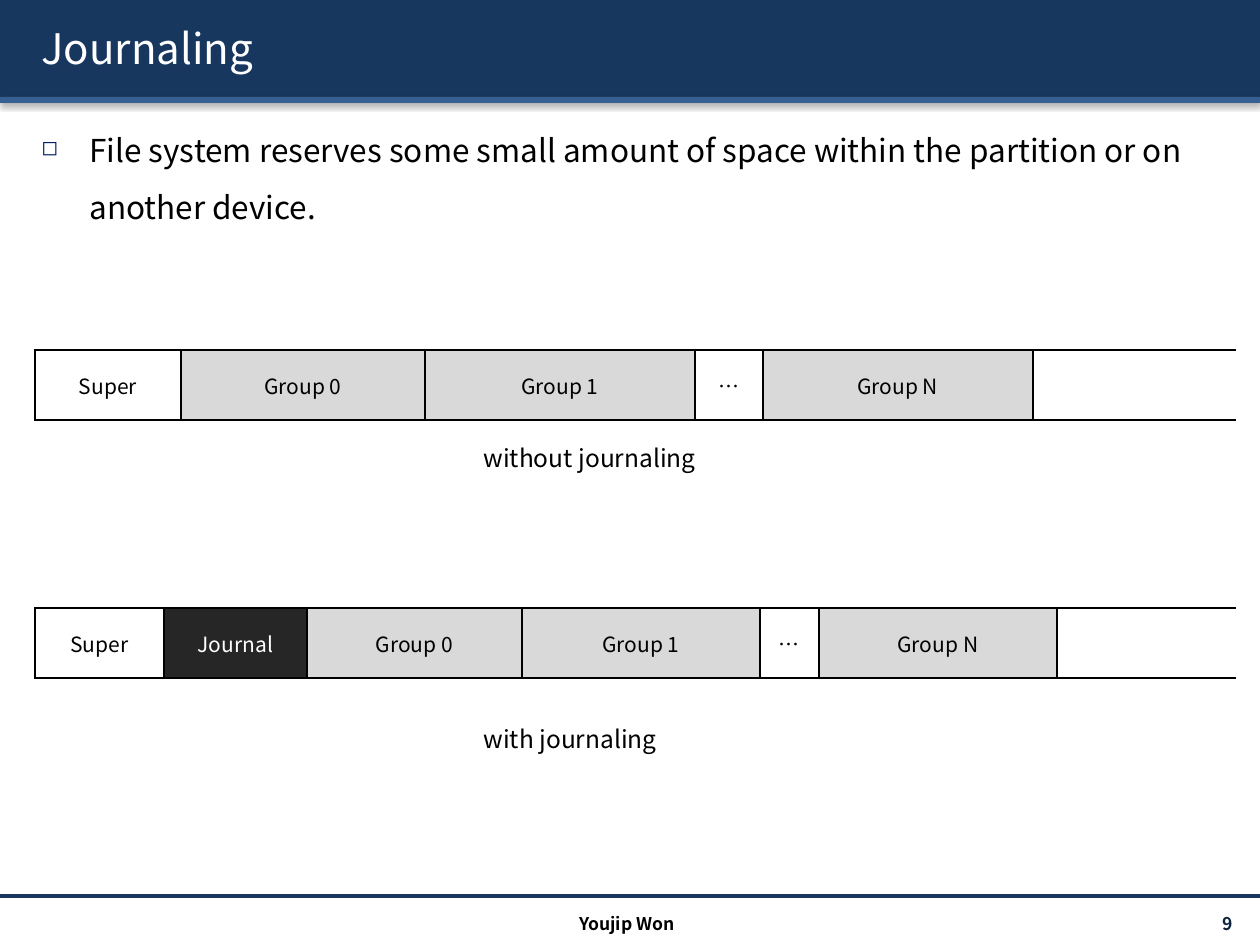
from lxml.etree import SubElement
from pptx import Presentation
from pptx.dml.color import RGBColor
from pptx.enum.shapes import MSO_CONNECTOR, MSO_SHAPE
from pptx.enum.text import MSO_ANCHOR, PP_ALIGN
from pptx.oxml import parse_xml
from pptx.oxml.ns import nsdecls, qn
from pptx.util import Pt

PX = 914400 / 126
FONT = "Noto Sans CJK KR"
COLORS = {
    "navy": "17375E", "blue": "376092", "bullet": "002060", "page": "0F243E",
    "black": "000000", "white": "FFFFFF", "gray": "D9D9D9", "dark": "262626",
}


def px(*values):
    return [round(v * PX) for v in values]


def write(tf, text, size, color="black", bold=False, align=PP_ALIGN.LEFT):
    """Put one styled run in a text frame and return its paragraph and run."""
    p = tf.paragraphs[0]
    p.alignment = align
    r = p.add_run()
    r.text = text
    for name, value in {"size": Pt(size), "bold": bold, "name": FONT}.items():
        setattr(r.font, name, value)
    r.font.color.rgb = RGBColor.from_string(COLORS[color])
    SubElement(r.font._element, qn("a:ea"), typeface=FONT)
    return p, r


prs = Presentation()
prs.slide_width, prs.slide_height = px(1260, 945)
s = prs.slides.add_slide(prs.slide_layouts[6])

SHADOW = (
    f'<a:effectLst {nsdecls("a")}><a:outerShdw blurRad="{{}}" dist="{{}}" dir="{{}}">'
    '<a:srgbClr val="000000"><a:alpha val="{}"/></a:srgbClr></a:outerShdw></a:effectLst>'
)

# Header bars and footer rule
for top, height, color in [(0, 97, "navy"), (97, 6, "blue")]:
    sp = s.shapes.add_shape(MSO_SHAPE.RECTANGLE, *px(0, top, 1260, height))
    sp.fill.solid()
    sp.fill.fore_color.rgb = RGBColor.from_string(COLORS[color])
    sp.line.fill.background()
    sp._element.spPr.append(parse_xml(SHADOW.format(39370, 20320, 5400000, 38000)))

rule = s.shapes.add_connector(MSO_CONNECTOR.STRAIGHT, *px(0, 896, 1260, 896))
rule.line.color.rgb = RGBColor.from_string(COLORS["navy"])
rule.line.width = Pt(2)
SubElement(rule._element.spPr, qn("a:effectLst"))

# Text boxes: box, anchor, text and its format
TOP, MIDDLE = MSO_ANCHOR.TOP, MSO_ANCHOR.MIDDLE
BODY = ("File system reserves some small amount of space within the partition "
        "or on another device.")
texts = [
    ((29, 8, 1211, 80), MIDDLE, "Journaling", {"size": 24, "color": "white"}),
    ((29, 106, 1211, 758), TOP, BODY, {"size": 18}),
    ((1097, 908, 148, 30), MIDDLE, "9",
     {"size": 10, "color": "page", "bold": True, "align": PP_ALIGN.RIGHT}),
    ((418, 907, 418, 30), TOP, "Youjip Won",
     {"size": 10, "bold": True, "align": PP_ALIGN.CENTER}),
    ((471, 437, 258, 43), TOP, "without journaling", {"size": 14}),
    ((471, 718, 258, 43), TOP, "with journaling", {"size": 14}),
]
for box, anchor, text, style in texts:
    tf = s.shapes.add_textbox(*px(*box)).text_frame
    tf.word_wrap = True
    tf.vertical_anchor = anchor
    p, r = write(tf, text, **style)
    if text == "Journaling":
        shadow = parse_xml(SHADOW.format(38100, 38100, 2700000, 100000))
        r.font._element.find(qn("a:solidFill")).addnext(shadow)
    elif text == BODY:
        p.line_spacing = 1.5
        pPr = p._p.get_or_add_pPr()
        indent = px(48)[0]
        pPr.set("marL", str(indent))
        pPr.set("indent", str(-indent))
        bu_color = SubElement(pPr, qn("a:buClr"))
        SubElement(bu_color, qn("a:srgbClr"), val=COLORS["bullet"])
        SubElement(pPr, qn("a:buSzPct"), val="65000")
        SubElement(pPr, qn("a:buChar"), char="◻")

# Disk layouts: label, width and fill of each region
layouts = [
    (350, [("Super", 146, "white"), ("Group 0", 244, "gray"), ("Group 1", 270, "gray"),
           ("…", 68, "white"), ("Group N", 270, "gray"), ("", 203, "white")]),
    (608, [("Super", 129, "white"), ("Journal", 143, "dark"), ("Group 0", 215, "gray"),
           ("Group 1", 238, "gray"), ("…", 59, "white"), ("Group N", 238, "gray"),
           ("", 179, "white")]),
]
for top, regions in layouts:
    total = sum(width for _, width, _ in regions)
    table = s.shapes.add_table(1, len(regions), *px(35, top, total, 70)).table
    table.first_row = table.horz_banding = False
    for i, (label, width, fill) in enumerate(regions):
        table.columns[i].width = px(width)[0]
        cell = table.cell(0, i)
        cell.vertical_anchor = MIDDLE
        color = "white" if fill == "dark" else "black"
        if label:
            write(cell.text_frame, label, 12, color, align=PP_ALIGN.CENTER)
        tcPr = cell._tc.get_or_add_tcPr()
        for side in ("lnL", "lnR", "lnT", "lnB"):
            ln = SubElement(tcPr, qn(f"a:{side}"), w="12700")
            if side == "lnR" and not label:  # the disk continues to the right
                SubElement(ln, qn("a:noFill"))
            else:
                line_fill = SubElement(ln, qn("a:solidFill"))
                SubElement(line_fill, qn("a:srgbClr"), val=COLORS["black"])
        cell.fill.solid()
        cell.fill.fore_color.rgb = RGBColor.from_string(COLORS[fill])

prs.save("out.pptx")
